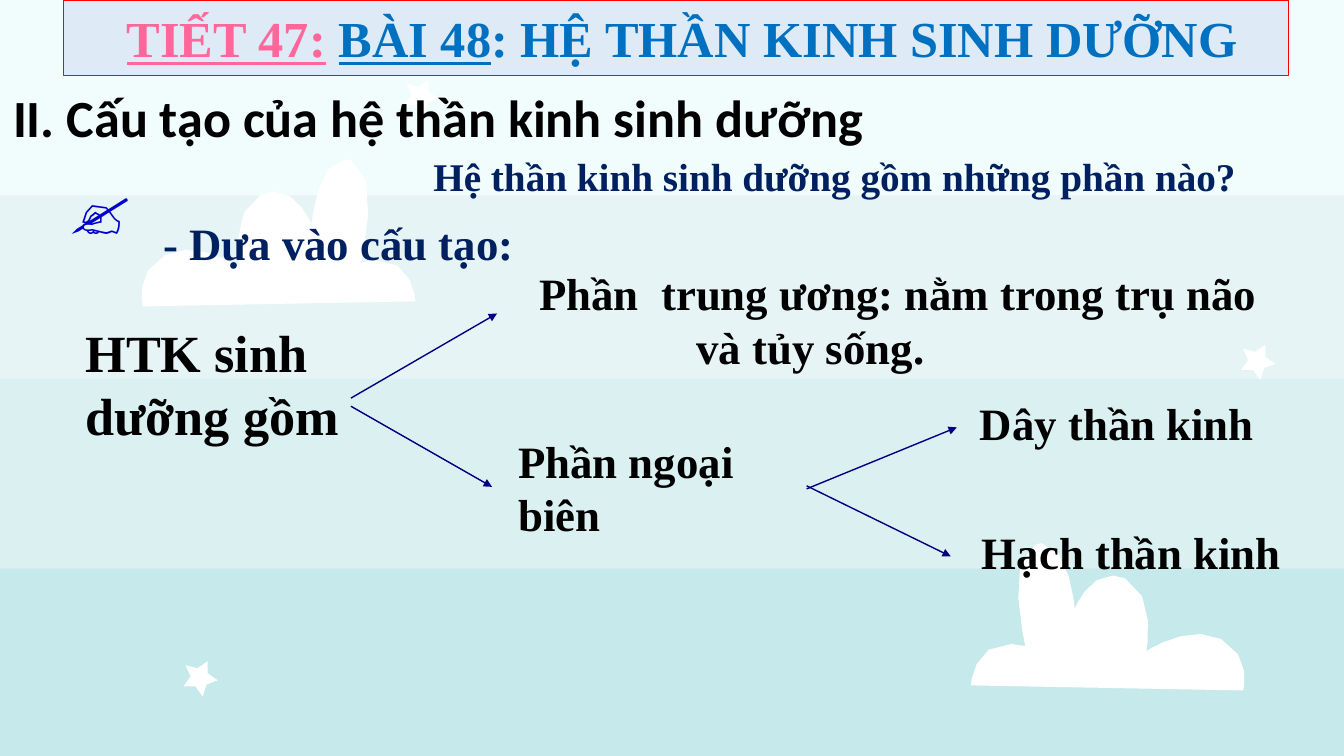
from dataclasses import dataclass

from lxml.etree import SubElement
from pptx import Presentation
from pptx.dml.color import RGBColor
from pptx.enum.shapes import MSO_CONNECTOR as Connector, MSO_SHAPE as Preset
from pptx.enum.text import MSO_ANCHOR as Anchor, MSO_AUTO_SIZE as AutoSize, PP_ALIGN as Align
from pptx.oxml.ns import qn
from pptx.util import Inches, Pt


@dataclass(frozen=True)
class Theme:
    serif: str = "Times New Roman"
    sans: str = "Calibri"
    symbol: str = "Arial"
    black: str = "000000"
    navy: str = "002060"
    arrow: str = "000080"
    pen: str = "0000CC"
    pink: str = "FF6699"
    blue: str = "0070C0"
    banner_fill: str = "DEEBF7"
    banner_line: str = "FF0000"
    white: str = "FFFFFF"
    banner_size: float = 36
    heading_size: float = 37.3
    body_size: float = 32
    question_size: float = 28
    pen_size: float = 48


THEME = Theme()

HEADING = "II. Cấu tạo của hệ thần kinh sinh dưỡng"
# text, font, size, colour, bold, underline
BANNER = [
    (" ", THEME.symbol, THEME.body_size, THEME.pink, False, False),
    ("TIẾT 47:", THEME.serif, THEME.banner_size, THEME.pink, True, True),
    (" ", THEME.serif, THEME.banner_size, THEME.pink, True, False),
    ("BÀI 48", THEME.serif, THEME.banner_size, THEME.blue, True, True),
    (": HỆ THẦN KINH SINH DƯỠNG", THEME.serif, THEME.banner_size, THEME.blue, True, False),
]
# box, text, hanging indent, font, size, colour
LABELS = [
    ((1.52, 2.09, 7, 0.64), "- Dựa vào cấu tạo:", 0,
     THEME.serif, THEME.body_size, THEME.navy),
    ((0.75, 3.13, 2.92, 1.36), "HTK sinh dưỡng gồm", 0,
     THEME.serif, THEME.heading_size, THEME.black),
    ((5.25, 2.59, 7.53, 1.18), "Phần  trung ương: nằm trong trụ não và tủy sống.", 1.56,
     THEME.serif, THEME.body_size, THEME.black),
    ((5.04, 4.25, 2.89, 1.18), "Phần ngoại biên", 0,
     THEME.serif, THEME.body_size, THEME.black),
    ((9.62, 3.88, 3.83, 0.64), "Dây thần kinh", 0,
     THEME.serif, THEME.body_size, THEME.black),
    ((9.64, 5.16, 3.83, 0.64), "Hạch thần kinh", 0,
     THEME.serif, THEME.body_size, THEME.black),
    ((0.59, 1.6, 0.9, 0.91), "✍", 0,
     THEME.symbol, THEME.pen_size, THEME.pen),
    ((4.2, 1.46, 9.64, 1.04), "Hệ thần kinh sinh dưỡng gồm những phần nào?", 0,
     THEME.serif, THEME.question_size, THEME.navy),
]
ARROWS = [
    ((3.48, 3.95), (4.93, 3.11)),
    ((3.48, 4.03), (4.88, 4.83)),
    ((8, 4.85), (9.49, 4.24)),
    ((8, 4.82), (9.43, 5.52)),
]

# top, height, colour
BANDS = [(1.89, 1.92, "E7F4F5"), (3.76, 1.92, "DBF0F1"),
         (5.64, 1.92, "C6EAEB"), (-0.04, 1.98, "F1FCFC")]
STAR = [(0.24, 0), (0.24, 0.12), (0.34, 0.19), (0.23, 0.23), (0.19, 0.35),
        (0.12, 0.25), (0, 0.25), (0.07, 0.15), (0.02, 0.04), (0.14, 0.07)]
STAR_CORNERS = [(4.01, 0.79), (1.82, 6.56), (12.31, 3.42)]
# Each cloud piece is a cubic curve (three points) or a straight line (one)
CLOUD_START = (10.33, 5.39)
CLOUD = [
    [(10.27, 5.4)],
    [(9.95, 5.48), (10.17, 6.41), (10.17, 6.41)],
    [(10.03, 6.39)],
    [(9.65, 6.37), (9.63, 6.8), (9.63, 6.8)],
    [(12.33, 6.85)],
    [(12.33, 6.85), (12.43, 6.51), (12.11, 6.34)],
    [(11.91, 6.29)],
    [(11.64, 6.28), (11.37, 6.46), (11.37, 6.46)],
    [(11.37, 6.46), (11.48, 5.89), (11.16, 5.74)],
    [(11.04, 5.71)],
    [(10.79, 5.7), (10.66, 6.04), (10.66, 6.04)],
    [(10.66, 6.04), (10.61, 5.4), (10.33, 5.39)],
]
CLOUD_MIRROR_X, CLOUD_LIFT = 13.75, 3.81
CURVE_STEPS = 4
FIRST_SCENERY_ID = 100


def rgb(colour):
    return RGBColor.from_string(colour)


def inches(values):
    return [Inches(value) for value in values]


def paint(shape, fill, line=None):
    shape.shadow.inherit = False
    shape.fill.solid()
    shape.fill.fore_color.rgb = rgb(fill)
    if line:
        shape.line.color.rgb = rgb(line)
        shape.line.width = Pt(0.75)
    else:
        shape.line.fill.background()
    return shape


def add_run(paragraph, text, font, size, colour, bold=True, underline=False):
    run = paragraph.add_run()
    run.text = text
    run.font.name = font
    run.font.size = Pt(size)
    run.font.bold = bold
    run.font.underline = underline
    run.font.color.rgb = rgb(colour)


def cloud_points():
    """Flatten the cloud's curves into a list of points."""
    points = [CLOUD_START]
    for piece in CLOUD:
        if len(piece) == 1:
            points += piece
            continue
        ends = [points[-1], *piece]
        for step in range(1, CURVE_STEPS + 1):
            t = step / CURVE_STEPS
            weights = ((1 - t) ** 3, 3 * t * (1 - t) ** 2, 3 * t * t * (1 - t), t ** 3)
            points.append(tuple(sum(w * end[axis] for w, end in zip(weights, ends))
                                for axis in (0, 1)))
    return points[:-1]


def add_outline(shapes, points):
    start, *rest = [inches(point) for point in points]
    builder = shapes.build_freeform(*start)
    builder.add_line_segments(rest, close=True)
    return paint(builder.convert_to_shape(), THEME.white)


def add_scenery(slide):
    """Draw the bands, stars and clouds, then hand them to the slide's layout."""
    shapes = slide.shapes
    cloud = cloud_points()
    mirrored = [(CLOUD_MIRROR_X - x, y - CLOUD_LIFT) for x, y in cloud]
    stars = [[(left + x, top + y) for x, y in STAR] for left, top in STAR_CORNERS]
    scenery = [paint(shapes.add_shape(Preset.RECTANGLE, *inches((-0.02, top, 13.43, height))),
                     colour) for top, height, colour in BANDS]
    scenery += [add_outline(shapes, points) for points in (*stars, cloud, mirrored)]
    for number, part in enumerate(scenery, FIRST_SCENERY_ID):
        part.element.nvSpPr.cNvPr.id = number
        slide.slide_layout.shapes.element.append(part.element)


def add_label(shapes, box, text, hanging, font, size, colour):
    frame = shapes.add_textbox(*inches(box)).text_frame
    frame.word_wrap = True
    frame.auto_size = AutoSize.SHAPE_TO_FIT_TEXT
    paragraph = frame.paragraphs[0]
    if hanging:
        properties = paragraph._p.get_or_add_pPr()
        properties.set("marL", str(Inches(hanging)))
        properties.set("indent", str(-Inches(hanging)))
    add_run(paragraph, text, font, size, colour)


def add_arrow(shapes, start, end):
    arrow = shapes.add_connector(Connector.STRAIGHT, *inches(start + end))
    arrow.line.color.rgb = rgb(THEME.arrow)
    arrow.line.width = Pt(1)
    SubElement(arrow.line._get_or_add_ln(), qn("a:tailEnd"), type="triangle")
    SubElement(arrow.element.spPr, qn("a:effectLst"))


def add_heading(title):
    title.left, title.top, title.width, title.height = inches((0, 0.72, 12.22, 0.88))
    frame = title.text_frame
    frame.word_wrap = True
    frame.vertical_anchor = Anchor.BOTTOM
    frame.margin_left = frame.margin_right = Inches(0.13)
    frame.margin_top = frame.margin_bottom = Inches(0.13)
    frame.paragraphs[0].alignment = Align.LEFT
    add_run(frame.paragraphs[0], HEADING, THEME.sans, THEME.heading_size, THEME.black)


def add_banner(shapes):
    banner = paint(shapes.add_shape(Preset.RECTANGLE, *inches((0.63, 0, 12.15, 0.75))),
                   THEME.banner_fill, THEME.banner_line)
    banner.text_frame.vertical_anchor = Anchor.MIDDLE
    paragraph = banner.text_frame.paragraphs[0]
    paragraph.alignment = Align.CENTER
    for part in BANNER:
        add_run(paragraph, *part)


def main():
    deck = Presentation()
    deck.slide_width, deck.slide_height = inches((13.33, 7.5))
    slide = deck.slides.add_slide(deck.slide_layouts[5])
    add_scenery(slide)
    add_heading(slide.shapes.title)
    for label in LABELS:
        add_label(slide.shapes, *label)
    for start, end in ARROWS:
        add_arrow(slide.shapes, start, end)
    add_banner(slide.shapes)
    deck.save("out.pptx")


if __name__ == "__main__":
    main()
